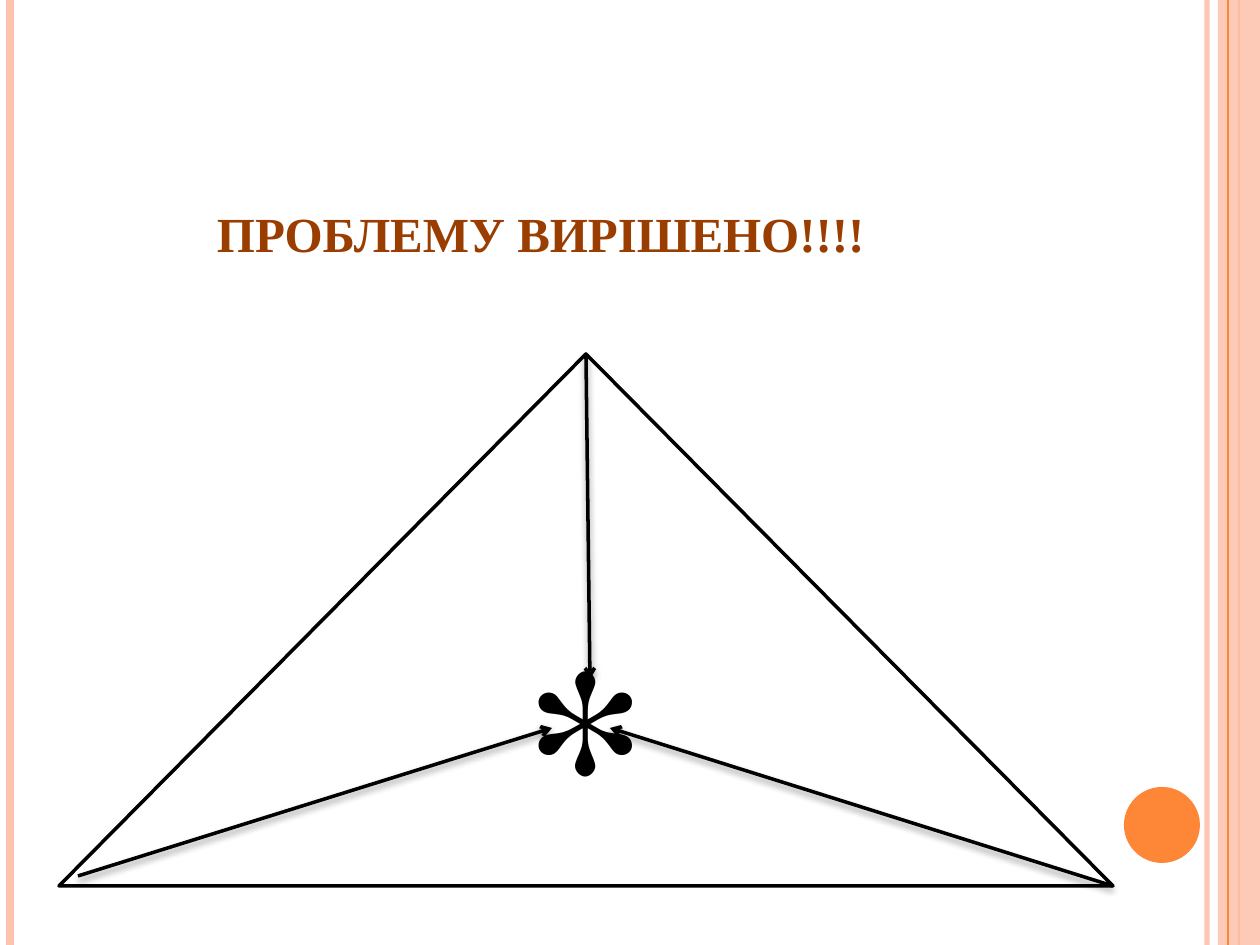
from dataclasses import dataclass

from lxml.etree import SubElement
from pptx import Presentation
from pptx.dml.color import RGBColor
from pptx.enum.shapes import MSO_CONNECTOR as Connector, MSO_SHAPE as Shape
from pptx.enum.text import MSO_ANCHOR as Anchor, PP_ALIGN as Align
from pptx.oxml.ns import qn
from pptx.util import Pt

PX = 914400 // 126
WIDTH, HEIGHT = 1260, 945


@dataclass(frozen=True)
class Theme:
    peach: str = "FEC3AE"
    orange: str = "FE8637"
    brown: str = "9A3D01"
    black: str = "000000"
    white: str = "FFFFFF"
    title_font: str = "Times New Roman"
    symbol_font: str = "TeX Gyre Schola"
    title_size: int = 28
    symbol_size: int = 138
    outline: int = 2


THEME = Theme()


def rgb(color):
    return RGBColor.from_string(color)


def set_alpha(fill, percent):
    color = fill._xPr.find(qn("a:solidFill"))[0]
    SubElement(color, qn("a:alpha"), val=str(percent * 1000))


def add_line(slide, start, end, color, weight, alpha=100):
    points = [value * PX for value in (*start, *end)]
    line = slide.shapes.add_connector(Connector.STRAIGHT, *points)
    line.line.color.rgb = rgb(color)
    line.line.width = Pt(weight)
    if alpha < 100:
        set_alpha(line.line.fill, alpha)
    SubElement(line._element.spPr, qn("a:effectLst"))
    return line


def add_arrow(slide, start, end):
    """Draw a black arrow with a soft shadow below it."""
    arrow = add_line(slide, start, end, THEME.black, THEME.outline)
    SubElement(arrow.line._get_or_add_ln(), qn("a:tailEnd"), type="arrow")
    effects = arrow._element.spPr.find(qn("a:effectLst"))
    shadow = SubElement(effects, qn("a:outerShdw"), blurRad=str(Pt(4)),
                        dist=str(Pt(2)), dir="5400000", rotWithShape="0")
    shade = SubElement(shadow, qn("a:srgbClr"), val=THEME.black)
    SubElement(shade, qn("a:alpha"), val="40000")


def add_figure(slide, preset, box, color, alpha=100):
    figure = slide.shapes.add_shape(preset, *(value * PX for value in box))
    figure.shadow.inherit = False
    figure.fill.solid()
    figure.fill.fore_color.rgb = rgb(color)
    if alpha < 100:
        set_alpha(figure.fill, alpha)
    figure.line.fill.background()
    return figure


def write(frame, text, font_name, size, color, bold=False, align=Align.CENTER):
    frame.text = text
    frame.word_wrap = True
    paragraph = frame.paragraphs[0]
    paragraph.alignment = align
    font = paragraph.runs[0].font
    font.name, font.size, font.bold = font_name, Pt(size), bold
    font.color.rgb = rgb(color)


def add_title(slide, text, box):
    title = slide.shapes.add_textbox(*(value * PX for value in box))
    frame = title.text_frame
    frame.margin_left = frame.margin_right = 0
    frame.margin_top = frame.margin_bottom = 0
    write(frame, text, THEME.title_font, THEME.title_size, THEME.brown,
          bold=True, align=Align.LEFT)


def add_side_bands(slide):
    def upright(x, color, weight, alpha=100):
        add_line(slide, (x, 0), (x, HEIGHT), color, weight, alpha)

    upright(1207, THEME.peach, 3, 93)
    upright(10, THEME.peach, 4.5)
    upright(1239, THEME.orange, 1.5)
    add_figure(slide, Shape.RECTANGLE, (1218, 0, 42, HEIGHT), THEME.peach, 87)
    upright(1228, THEME.orange, 0.75)
    add_figure(slide, Shape.OVAL, (1124, 787, 76, 76), THEME.orange)


def add_triangle(slide, box, symbol):
    triangle = add_figure(slide, Shape.ISOSCELES_TRIANGLE, box, THEME.white)
    triangle.line.color.rgb = rgb(THEME.black)
    triangle.line.width = Pt(THEME.outline)
    triangle.text_frame.vertical_anchor = Anchor.MIDDLE
    write(triangle.text_frame, symbol, THEME.symbol_font, THEME.symbol_size,
          THEME.black)


def main():
    deck = Presentation()
    deck.slide_width, deck.slide_height = WIDTH * PX, HEIGHT * PX
    slide = deck.slides.add_slide(deck.slide_layouts[6])

    add_side_bands(slide)
    add_title(slide, "ПРОБЛЕМУ ВИРІШЕНО!!!!", (217, 204, 700, 56))

    left, top, width, height = 59, 354, 1054, 532
    add_triangle(slide, (left, top, width, height), "*")
    add_arrow(slide, (78, 876), (552, 728))
    add_arrow(slide, (left + width, top + height), (610, 728))
    add_arrow(slide, (left + width // 2, top), (590, 679))

    deck.save("out.pptx")


if __name__ == "__main__":
    main()
